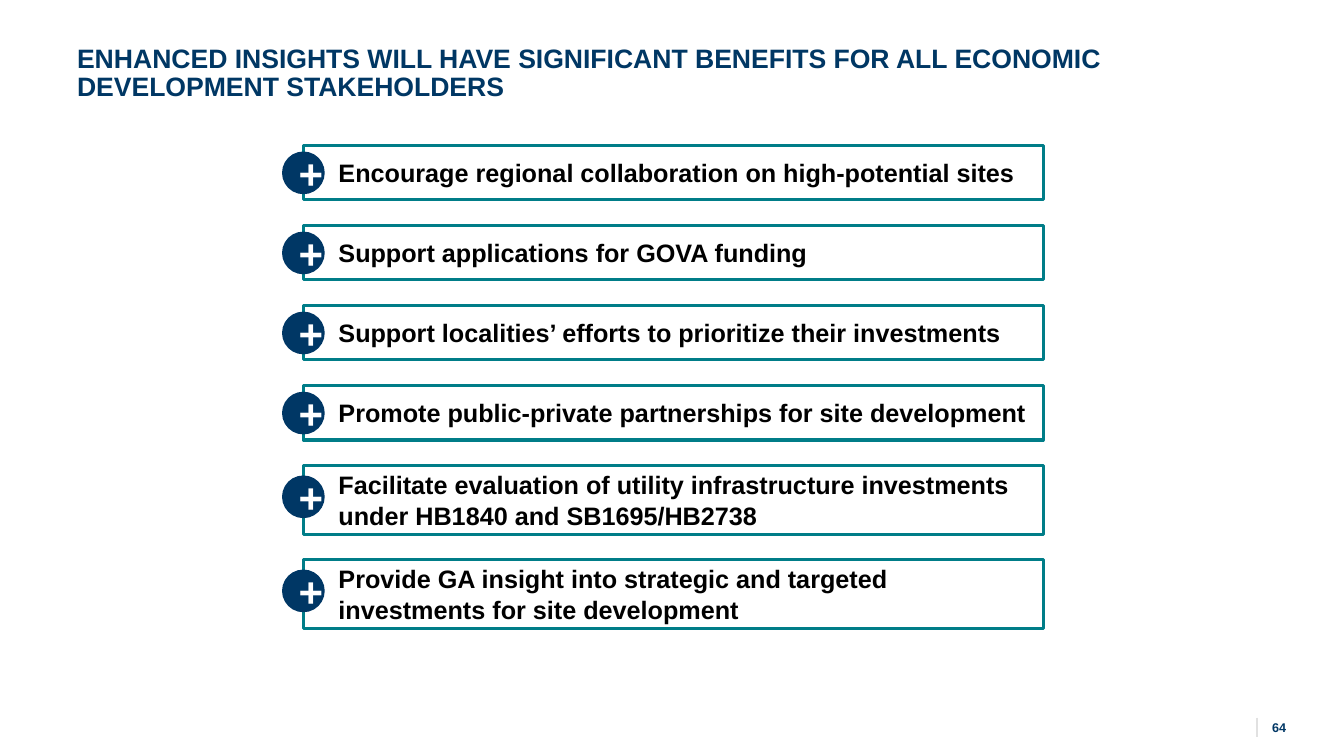
from lxml import etree
from pptx import Presentation
from pptx.dml.color import RGBColor as Rgb
from pptx.enum.shapes import MSO_CONNECTOR as Conn, MSO_SHAPE as Kind
from pptx.enum.text import MSO_ANCHOR as Anchor, PP_ALIGN as Align
from pptx.oxml.ns import qn
from pptx.util import Pt

TITLE = ("ENHANCED INSIGHTS WILL HAVE SIGNIFICANT BENEFITS "
         "FOR ALL ECONOMIC DEVELOPMENT STAKEHOLDERS")
PAGE = "64"
PLUS = "+"
GOALS = [
    ("Encourage regional collaboration on high-potential sites", 1),
    ("Support applications for GOVA funding", 1),
    ("Support localities’ efforts to prioritize their investments", 1),
    ("Promote public-private partnerships for site development", 1),
    ("Facilitate evaluation of utility infrastructure investments "
     "under HB1840 and SB1695/HB2738", 2),
    ("Provide GA insight into strategic and targeted "
     "investments for site development", 2),
]
HUES = {"navy": "003765", "title": "003764", "teal": "007D88",
        "black": "000000", "white": "FFFFFF", "gray": "E1E1E1"}
FORMS = {
    "title": {"size": Pt(19), "hue": "title", "line_spacing": 0.9},
    "goal": {"size": Pt(18), "hue": "black", "alignment": Align.LEFT},
    "plus": {"size": Pt(30), "hue": "white", "alignment": Align.CENTER},
    "page": {"size": Pt(9), "hue": "navy"},
}
LEFT, TOP, WIDE, GAP = 216.7, 103.7, 528.5, 18.2
TALL = {1: 39, 2: 49}
DROP = {1: 5, 2: 7.6}
DISC, INDENT = 29.5, 18


def tint(name):
    return Rgb.from_string(HUES[name])


def write(shape, text, form, anchor, margins=None):
    frame = shape.text_frame
    frame.word_wrap = True
    frame.vertical_anchor = anchor
    for side, size in (margins or {}).items():
        setattr(frame, "margin_" + side, Pt(size))
    para = frame.paragraphs[0]
    run = para.add_run()
    run.text = text
    run.font.name = "Arial"
    run.font.bold = True
    for key, value in FORMS[form].items():
        if key == "hue":
            run.font.color.rgb = tint(value)
        else:
            setattr(run.font if key == "size" else para, key, value)
    return para


def draw(kind, box, edge, width, fill=None):
    shape = slide.shapes.add_shape(kind, *map(Pt, box))
    shape.shadow.inherit = False
    shape.line.color.rgb = tint(edge)
    shape.line.width = Pt(width)
    if fill:
        shape.fill.solid()
        shape.fill.fore_color.rgb = tint(fill)
    else:
        shape.fill.background()
    return shape


deck = Presentation()
deck.slide_width, deck.slide_height = Pt(960), Pt(540)
slide = deck.slides.add_slide(deck.slide_layouts[6])

rule = slide.shapes.add_connector(
    Conn.STRAIGHT, Pt(897.8), Pt(512.6), Pt(897.8), Pt(526.3))
rule.line.color.rgb = tint("gray")
rule.line.width = Pt(1.5)
etree.SubElement(rule._element.spPr, qn("a:effectLst"))

page = slide.shapes.add_textbox(Pt(908.6), Pt(510.5), Pt(48), Pt(18))
write(page, PAGE, "page", Anchor.TOP, {"left": 0, "right": 0})
title = slide.shapes.add_textbox(Pt(48), Pt(28.8), Pt(828), Pt(48))
write(title, TITLE, "title", Anchor.TOP)

top = TOP
for goal, rows in GOALS:
    bar = draw(Kind.RECTANGLE, (LEFT, top, WIDE, TALL[rows]), "teal", 2.25)
    para = write(bar, goal, "goal", Anchor.MIDDLE)
    para._p.get_or_add_pPr().set("marL", str(Pt(INDENT)))
    spot = (LEFT - DISC / 2, top + DROP[rows], DISC, DISC)
    disc = draw(Kind.OVAL, spot, "navy", 1, "navy")
    write(disc, PLUS, "plus", Anchor.MIDDLE)
    top += TALL[rows] + GAP

deck.save("out.pptx")
